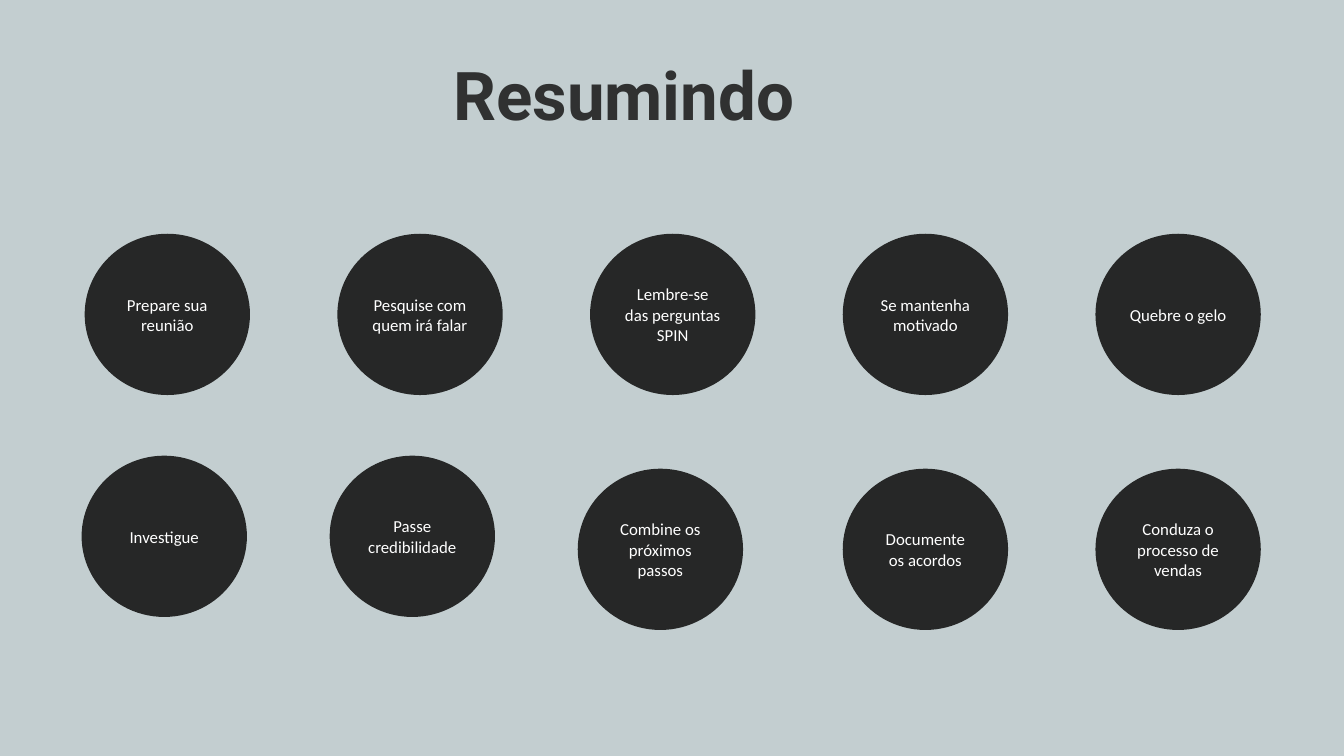
from pptx import Presentation
from pptx.dml.color import RGBColor
from pptx.enum import shapes, text
from pptx.util import Pt

HUES = {"back": "C3CED0", "disc": "262727", "title": "303131", "label": "FFFFFF"}


class Deck:
    """Holds the style and the current slide, and draws each kind of element."""

    def __init__(self, wide, high):
        self.prs = Presentation()
        self.prs.slide_width, self.prs.slide_height = Pt(wide), Pt(high)
        self.slide = self.prs.slides.add_slide(self.prs.slide_layouts[6])

    def hue(self, name):
        return RGBColor.from_string(HUES[name])

    def shape(self, kind, box, fill):
        item = self.slide.shapes.add_shape(kind, *map(Pt, box))
        item.shadow.inherit = False
        item.fill.solid()
        item.fill.fore_color.rgb = self.hue(fill)
        item.line.fill.background()
        return item

    def label(self, frame, words, face, size, hue, bold=False):
        frame.word_wrap = True
        run = frame.paragraphs[0].add_run()
        run.text = words
        run.font.name, run.font.size, run.font.bold = face, Pt(size), bold
        run.font.color.rgb = self.hue(hue)

    def title(self, words, box):
        frame = self.slide.shapes.add_textbox(*map(Pt, box)).text_frame
        frame.auto_size = text.MSO_AUTO_SIZE.SHAPE_TO_FIT_TEXT
        self.label(frame, words, "Roboto", 48, "title", True)

    def disc(self, words, left, top):
        box = left, top, 118.1, 115.2
        frame = self.shape(shapes.MSO_SHAPE.OVAL, box, "disc").text_frame
        frame.vertical_anchor = text.MSO_ANCHOR.MIDDLE
        frame.paragraphs[0].alignment = text.PP_ALIGN.CENTER
        self.label(frame, words, "Calibri", 12, "label")


def main():
    wide, high = 960, 540
    deck = Deck(wide, high)
    deck.shape(shapes.MSO_SHAPE.RECTANGLE, (0, 0, wide, high), "back")
    deck.title("Resumindo", (316.8, 34.5, 472.3, 65.5))

    cols = [60.5 + 180.5 * i for i in range(5)]
    first = ["Prepare sua reunião", "Pesquise com quem irá falar",
             "Lembre-se das perguntas SPIN", "Se mantenha motivado", "Quebre o gelo"]
    for words, left in zip(first, cols):
        deck.disc(words, left, 167)

    high_row, low_row = 325.5, 334.8
    second = [("Investigue", 58.3, high_row),
              ("Passe credibilidade", 235.5, high_row),
              ("Combine os próximos passos", 412.7, low_row),
              ("Documente os acordos", cols[3], low_row),
              ("Conduza o processo de vendas", cols[4], low_row)]
    for item in second:
        deck.disc(*item)
    deck.prs.save("out.pptx")


if __name__ == "__main__":
    main()
